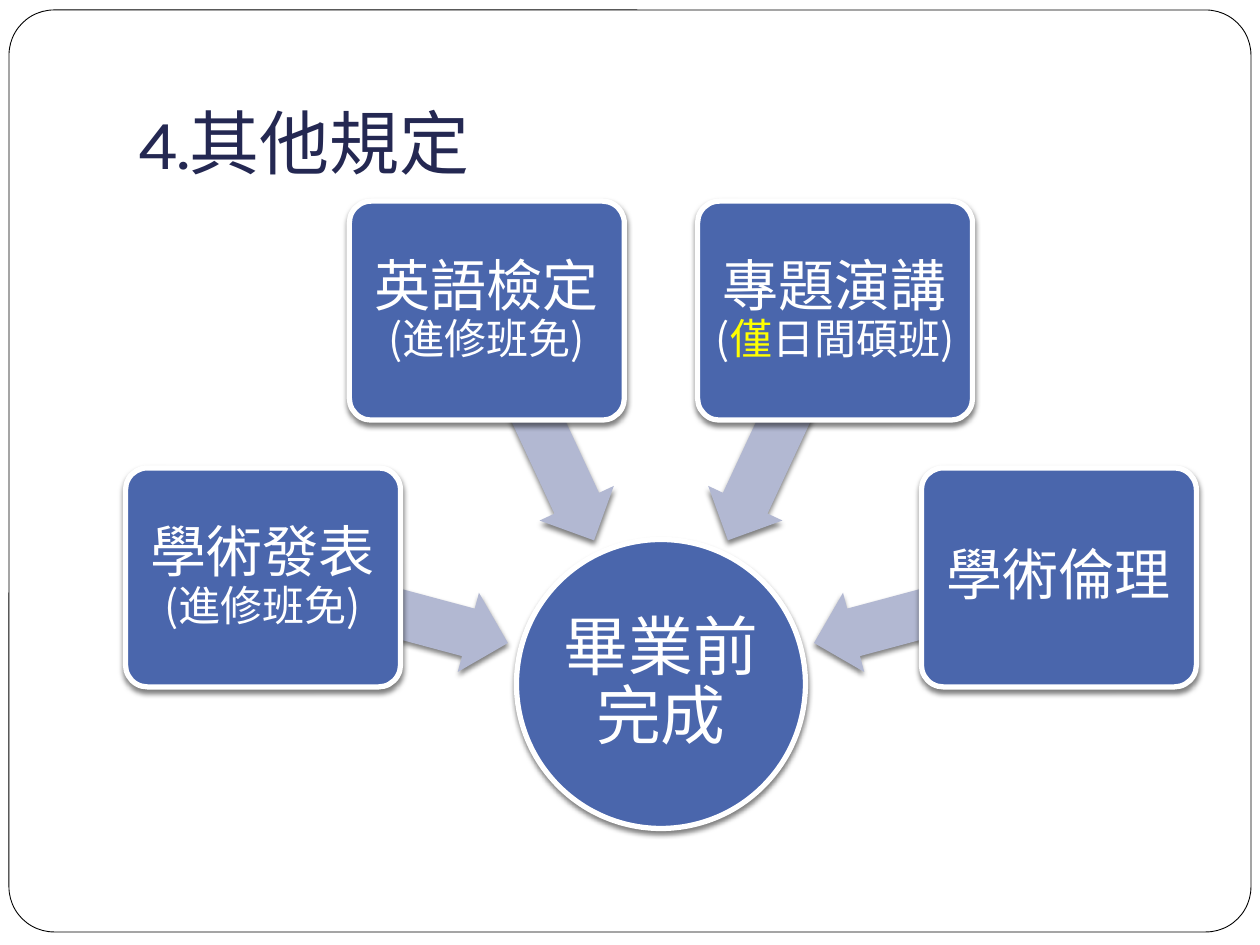
from dataclasses import dataclass
from math import cos, radians, sin

from lxml.etree import SubElement
from pptx import Presentation
from pptx.dml.color import RGBColor
from pptx.enum.shapes import MSO_SHAPE
from pptx.enum.text import MSO_ANCHOR, PP_ALIGN
from pptx.oxml import parse_xml
from pptx.oxml.ns import nsdecls, qn
from pptx.util import Emu, Pt

PX = 914400 / 126


def px(n):
    return Emu(round(n * PX))


@dataclass(frozen=True)
class Theme:
    navy: str = "242852"
    blue: str = "4A66AC"
    pale: str = "B2B8D2"
    white: str = "FFFFFF"
    black: str = "000000"
    yellow: str = "FFFF00"
    title_font: str = "Karla"
    body_font: str = "Noto Sans CJK SC"
    title_size: int = 40
    hub_size: int = 37
    box_size: int = 32
    note_size: int = 24


class Deck:
    """Current slide plus the theme its elements are drawn with."""

    def __init__(self, prs, theme):
        self.t = theme
        self.s = prs.slides.add_slide(prs.slide_layouts[6])

    def shape(self, kind, x, y, w, h, fill, line=None, line_pt=3, adj=(), shadow=True):
        sp = self.s.shapes.add_shape(kind, px(x), px(y), px(w), px(h))
        for i, value in enumerate(adj):
            sp.adjustments[i] = value
        sp.fill.solid()
        sp.fill.fore_color.rgb = RGBColor.from_string(fill)
        if line:
            sp.line.color.rgb = RGBColor.from_string(line)
            sp.line.width = Pt(line_pt)
        else:
            sp.line.fill.background()
        sp.shadow.inherit = False
        if shadow:
            self.drop_shadow(sp)
        return sp

    def drop_shadow(self, sp):
        effects = sp._element.spPr.find(qn("a:effectLst"))
        effects.append(parse_xml(
            f'<a:outerShdw {nsdecls("a")} blurRad="{Pt(3)}" dist="{Pt(2)}" '
            f'dir="5400000" rotWithShape="0"><a:srgbClr val="{self.t.black}">'
            '<a:alpha val="50000"/></a:srgbClr></a:outerShdw>'))

    def run(self, p, text, size, color, font):
        r = p.add_run()
        r.text = text
        r.font.size = Pt(size)
        r.font.name = font
        r.font.color.rgb = RGBColor.from_string(color)
        SubElement(r._r.get_or_add_rPr(), qn("a:ea")).set("typeface", font)

    def label(self, sp, runs, inset):
        tf = sp.text_frame
        tf.word_wrap = True
        tf.vertical_anchor = MSO_ANCHOR.MIDDLE
        tf.margin_left = tf.margin_right = tf.margin_top = tf.margin_bottom = px(inset)
        p = tf.paragraphs[0]
        p.alignment = PP_ALIGN.CENTER
        p.line_spacing = 0.9
        for text, size, color in runs:
            self.run(p, text, size, color, self.t.body_font)

    def title(self, text, x, y, w, h):
        tf = self.s.shapes.add_textbox(px(x), px(y), px(w), px(h)).text_frame
        tf.word_wrap = True
        tf.vertical_anchor = MSO_ANCHOR.BOTTOM
        tf.margin_bottom = px(13)
        self.run(tf.paragraphs[0], text, self.t.title_size, self.t.navy, self.t.title_font)

    def frame(self, x, y, w, h):
        self.shape(MSO_SHAPE.ROUNDED_RECTANGLE, x, y, w, h, self.t.white,
                   self.t.black, 0.5, adj=(0.049,), shadow=False)

    def hub(self, cx, cy, d, text):
        sp = self.shape(MSO_SHAPE.OVAL, cx - d / 2, cy - d / 2, d, d,
                        self.t.blue, self.t.white)
        self.label(sp, [(text, self.t.hub_size, self.t.white)], 4)

    def arrow(self, cx, cy, w, h, angle):
        sp = self.shape(MSO_SHAPE.LEFT_ARROW, cx - w / 2, cy - h / 2, w, h,
                        self.t.pale, adj=(0.6, 0.5))
        sp.rotation = angle

    def box(self, cx, cy, w, h, runs):
        sp = self.shape(MSO_SHAPE.ROUNDED_RECTANGLE, cx - w / 2, cy - h / 2, w, h,
                        self.t.blue, self.t.white, adj=(0.1,))
        self.label(sp, runs, 9)


def main():
    prs = Presentation()
    prs.slide_width, prs.slide_height = px(1260), px(945)
    t = Theme()
    deck = Deck(prs, t)
    deck.frame(9, 10, 1242, 922)
    deck.title("4.其他規定", 126, 38, 1071, 158)

    def head(text):
        return text, t.box_size, t.white

    def note(text, color=t.white):
        return text, t.note_size, color

    requirements = [
        [head("學術發表"), note("(進修班免)")],
        [head("英語檢定"), note("(進修班免)")],
        [head("專題演講"), note("("), note("僅", t.yellow), note("日間碩班)")],
        [head("學術倫理")],
    ]
    hub_x, hub_y = 661, 684
    arrow_radius, box_radius = 285, 412
    first_angle, step = 195, 50

    def around_hub(radius, angle):
        a = radians(angle)
        return hub_x + radius * cos(a), hub_y + radius * sin(a)

    deck.hub(hub_x, hub_y, 289, "畢業前完成")
    for i, runs in enumerate(requirements):
        angle = first_angle + i * step
        deck.arrow(*around_hub(arrow_radius, angle), 253, 82, angle)
        deck.box(*around_hub(box_radius, angle), 275, 219, runs)

    prs.save("out.pptx")


if __name__ == "__main__":
    main()
